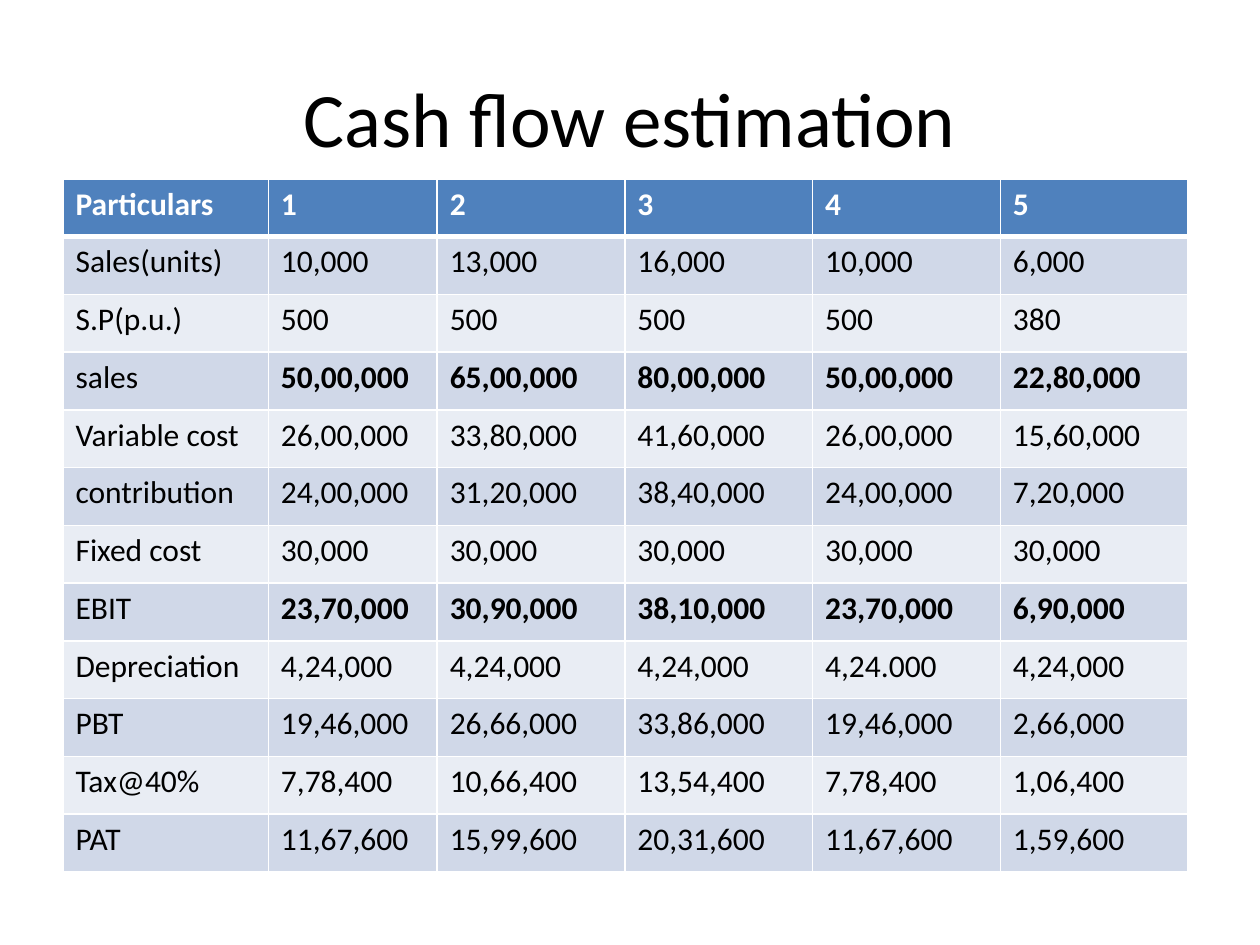
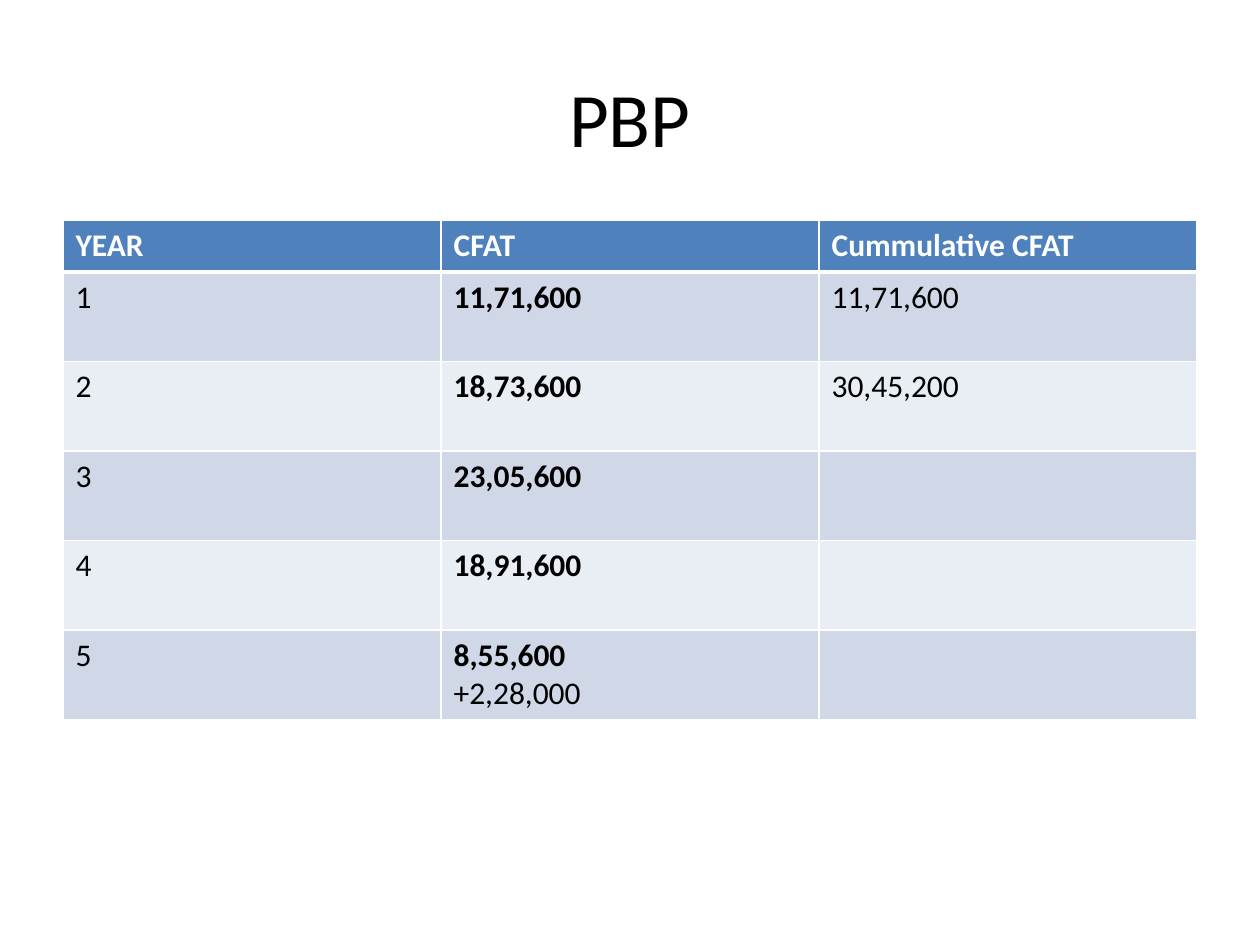
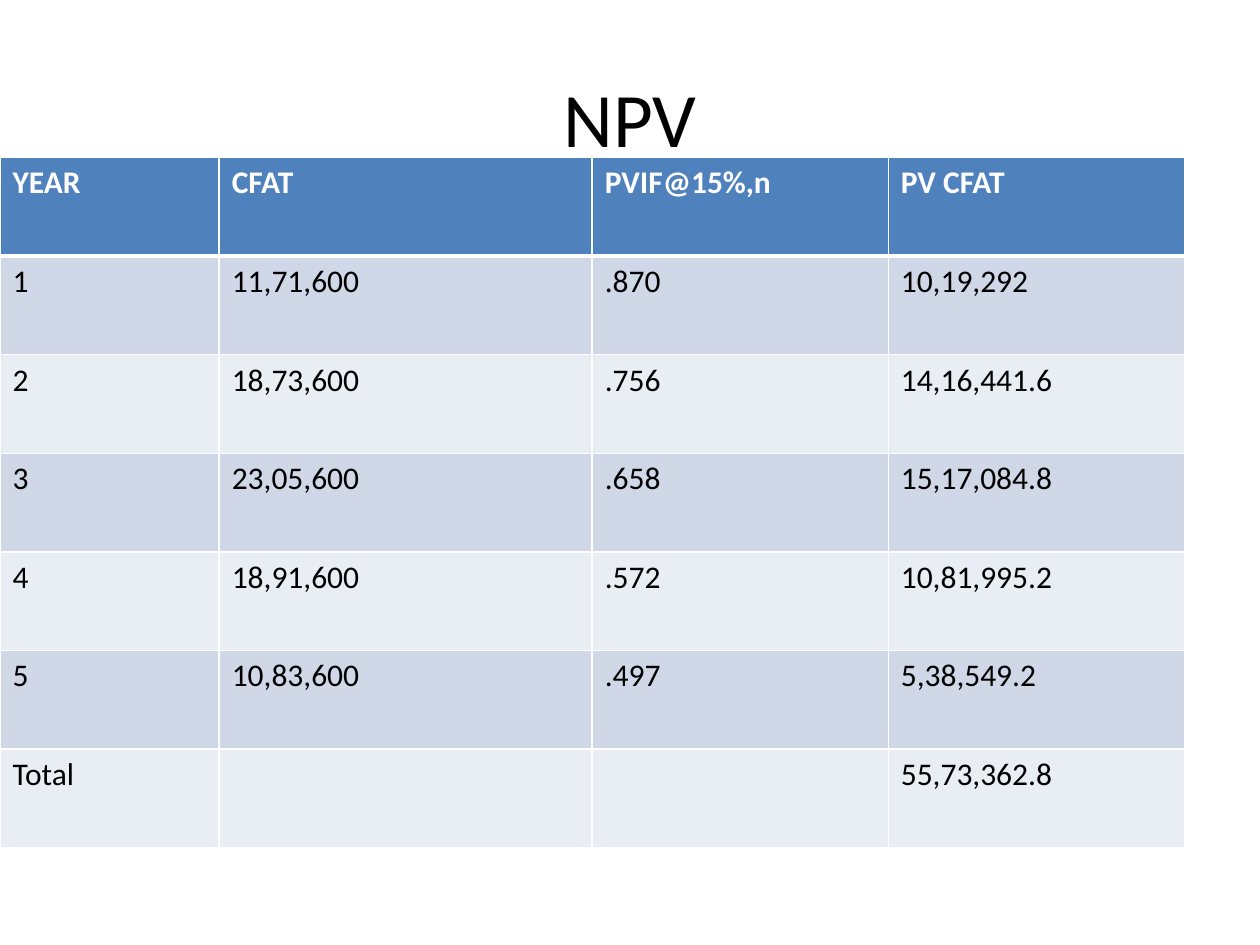
from dataclasses import dataclass

from lxml.etree import SubElement
from pptx import Presentation
from pptx.dml.color import RGBColor
from pptx.enum.text import MSO_ANCHOR, PP_ALIGN
from pptx.oxml.ns import qn
from pptx.util import Inches, Pt


@dataclass(frozen=True)
class Theme:
    font: str = "Calibri"
    ink: str = "000000"
    paper: str = "FFFFFF"
    header: str = "4F81BD"
    bands: tuple = ("D0D8E8", "E9EDF4")
    title_size: int = 44
    table_size: int = 18
    rule: int = 1
    header_rule: int = 3


THEME = Theme()


def add_run(paragraph, text, size, color, bold=False):
    run = paragraph.add_run()
    run.text = text
    run.font.name = THEME.font
    run.font.size = Pt(size)
    run.font.bold = bold
    run.font.color.rgb = RGBColor.from_string(color)


def set_borders(cell, row):
    widths = {
        "a:lnL": THEME.rule,
        "a:lnR": THEME.rule,
        "a:lnT": THEME.header_rule if row == 1 else THEME.rule,
        "a:lnB": THEME.header_rule if row == 0 else THEME.rule,
    }
    properties = cell._tc.get_or_add_tcPr()
    for side, width in widths.items():
        line = SubElement(properties, qn(side), w=str(Pt(width)))
        fill = SubElement(line, qn("a:solidFill"))
        SubElement(fill, qn("a:srgbClr"), val=THEME.paper)


# Content: position, column widths and row heights are in inches
cash_flow = {
    "title": "Cash flow estimation",
    "at": (0.5, 1.42),
    "columns": [1.63, 1.34] + [1.49] * 4,
    "row_heights": [5.5 / 12] * 12,
    "bold_rows": ("sales", "EBIT"),
    "rows": [
        ["Particulars", "1", "2", "3", "4", "5"],
        ["Sales(units)", "10,000", "13,000", "16,000", "10,000", "6,000"],
        ["S.P(p.u.)", "500", "500", "500", "500", "380"],
        ["sales", "50,00,000", "65,00,000", "80,00,000", "50,00,000", "22,80,000"],
        ["Variable cost", "26,00,000", "33,80,000", "41,60,000", "26,00,000", "15,60,000"],
        ["contribution", "24,00,000", "31,20,000", "38,40,000", "24,00,000", "7,20,000"],
        ["Fixed cost"] + ["30,000"] * 5,
        ["EBIT", "23,70,000", "30,90,000", "38,10,000", "23,70,000", "6,90,000"],
        ["Depreciation", "4,24,000", "4,24,000", "4,24,000", "4,24.000", "4,24,000"],
        ["PBT", "19,46,000", "26,66,000", "33,86,000", "19,46,000", "2,66,000"],
        ["Tax@40%", "7,78,400", "10,66,400", "13,54,400", "7,78,400", "1,06,400"],
        ["PAT", "11,67,600", "15,99,600", "20,31,600", "11,67,600", "1,59,600"],
    ],
}

payback = {
    "title": "PBP",
    "at": (0.5, 1.75),
    "columns": [3] * 3,
    "row_heights": [0.41] + [0.71] * 5,
    "bold_columns": ("CFAT",),
    "rows": [
        ["YEAR", "CFAT", "Cummulative CFAT"],
        ["1", "11,71,600", "11,71,600"],
        ["2", "18,73,600", "30,45,200"],
        ["3", "23,05,600", ""],
        ["4", "18,91,600", ""],
        ["5", "8,55,600\n+2,28,000", ""],
    ],
}

present_value = {
    "title": "NPV",
    "at": (0, 1.25),
    "columns": [1.74, 2.96, 2.35, 2.35],
    "row_heights": [5.48 / 7] * 7,
    "rows": [
        ["YEAR", "CFAT", "PVIF@15%,n", "PV CFAT"],
        ["1", "11,71,600", ".870", "10,19,292"],
        ["2", "18,73,600", ".756", "14,16,441.6"],
        ["3", "23,05,600", ".658", "15,17,084.8"],
        ["4", "18,91,600", ".572", "10,81,995.2"],
        ["5", "10,83,600", ".497", "5,38,549.2"],
        ["Total", "", "", "55,73,362.8"],
    ],
}

deck = Presentation()
deck.slide_width, deck.slide_height = Inches(10), Inches(7.5)
title_only = deck.slide_layouts[5]

for topic in (cash_flow, payback, present_value):
    slide = deck.slides.add_slide(title_only)

    # Title
    title = slide.shapes.title
    title.left, title.top = Inches(0.5), Inches(0.3)
    title.width, title.height = Inches(9), Inches(1.25)
    title.text_frame.vertical_anchor = MSO_ANCHOR.MIDDLE
    heading = title.text_frame.paragraphs[0]
    heading.alignment = PP_ALIGN.CENTER
    add_run(heading, topic["title"], THEME.title_size, THEME.ink)

    # Table grid
    rows, columns, heights = topic["rows"], topic["columns"], topic["row_heights"]
    left, top = topic["at"]
    table = slide.shapes.add_table(
        len(rows), len(columns), Inches(left), Inches(top),
        Inches(sum(columns)), Inches(sum(heights)),
    ).table
    for column, width in zip(table.columns, columns):
        column.width = Inches(width)
    for row, height in zip(table.rows, heights):
        row.height = Inches(height)

    # Cells: a header row over alternating bands
    for r, values in enumerate(rows):
        is_header = r == 0
        band = THEME.header if is_header else THEME.bands[(r - 1) % 2]
        color = THEME.paper if is_header else THEME.ink
        for c, value in enumerate(values):
            cell = table.cell(r, c)
            set_borders(cell, r)
            cell.fill.solid()
            cell.fill.fore_color.rgb = RGBColor.from_string(band)
            emphasis = (
                c > 0 and values[0] in topic.get("bold_rows", ())
                or rows[0][c] in topic.get("bold_columns", ())
            )
            frame = cell.text_frame
            for n, line in enumerate(value.splitlines()):
                paragraph = frame.add_paragraph() if n else frame.paragraphs[0]
                bold = is_header or (emphasis and n == 0)
                add_run(paragraph, line, THEME.table_size, color, bold)

deck.save("out.pptx")
